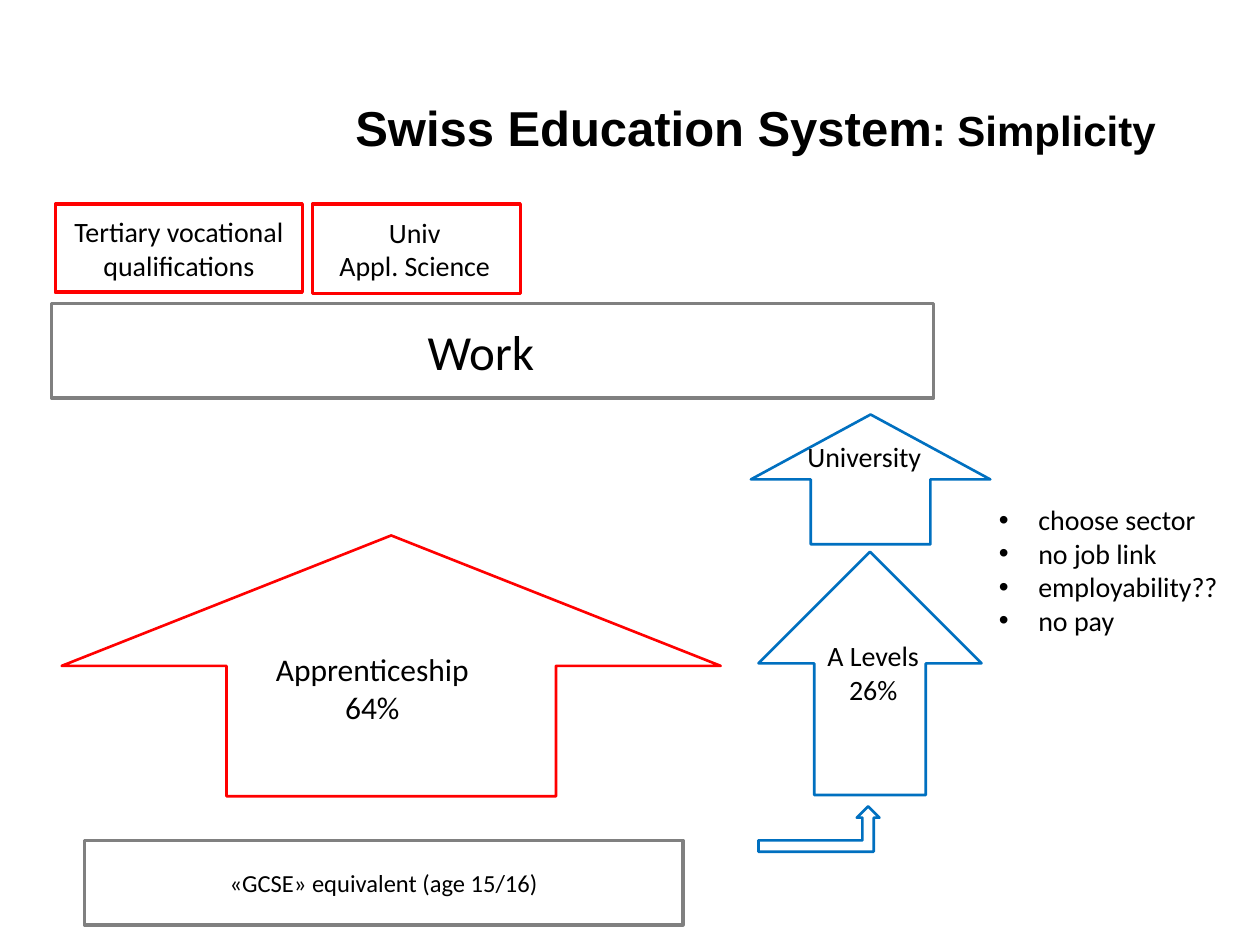
from lxml import etree
from pptx import Presentation
from pptx.dml.color import RGBColor
from pptx.enum.shapes import MSO_SHAPE
from pptx.enum.text import MSO_ANCHOR, MSO_AUTO_SIZE, PP_ALIGN
from pptx.oxml.ns import qn
from pptx.util import Pt

BLACK = RGBColor(0x00, 0x00, 0x00)
WHITE = RGBColor(0xFF, 0xFF, 0xFF)
RED = RGBColor(0xFF, 0x00, 0x00)
GREY = RGBColor(0x80, 0x80, 0x80)
BLUE = RGBColor(0x00, 0x70, 0xC0)
BOX, UP, BENT = MSO_SHAPE.RECTANGLE, MSO_SHAPE.UP_ARROW, MSO_SHAPE.BENT_UP_ARROW
LEFT, CENTER = PP_ALIGN.LEFT, PP_ALIGN.CENTER
TOP, MIDDLE = MSO_ANCHOR.TOP, MSO_ANCHOR.MIDDLE

TITLE = [("Swiss Education System", 28), (": Simplicity", 24)]
TITLE_AREA = (195.84, 49.68, 494.64, 56.16)

# (left, top, width, height), line colour, lines of text, size, right inset
STAGES = [
    ((178.56, 116.64, 118.8, 51.12), RED, ["Univ", "Appl. Science"], 16, 9),
    ((31.68, 116.64, 141.12, 50.4), RED, ["Tertiary vocational qualifications"], 16, 7.2),
    ((48.24, 480.24, 342, 48.24), GREY, ["«GCSE» equivalent (age 15/16)"], 14, 7.2),
    ((29.52, 173.52, 504, 54), GREY, ["Work"], 28, 20.5),
]

# preset, (left, top, width, height), line colour, fill, adjustments
ARROWS = [
    (UP, (35.28, 306, 376.56, 149.04), RED, WHITE, (0.5, 0.5)),
    (BENT, (433.44, 460.8, 69.12, 25.92), BLUE, None, (0.25, 0.25, 0.25)),
    (UP, (433.44, 315.36, 127.44, 138.96), BLUE, WHITE, (0.5, 0.5)),
    (UP, (429.12, 236.88, 136.8, 74.16), BLUE, None, (0.5, 0.5)),
]

# (left, top, width, height), lines of text, format
LABELS = [
    ((563.76, 283.68, 147.6, 84.96),
     ["choose sector", "no job link", "employability??", "no pay"],
     dict(size=16, bullet="•")),
    ((95.04, 367.92, 235.44, 51.12), ["Apprenticeship", "64%"],
     dict(size=18, align=CENTER)),
    ((454.32, 247.68, 96.48, 26.64), ["University"], dict(size=16)),
    ((416.88, 361.44, 164.16, 46.08), ["A Levels", "26%"],
     dict(size=16, align=CENTER)),
]


def points(area):
    return [Pt(length) for length in area]


def add_bullet(paragraph, char, indent=22.5):
    props = paragraph._p.get_or_add_pPr()
    props.set("marL", str(Pt(indent)))
    props.set("indent", str(-Pt(indent)))
    etree.SubElement(props, qn("a:buFont")).set("typeface", "Arial")
    etree.SubElement(props, qn("a:buChar")).set("char", char)


def write(frame, lines, size=16, font="Calibri", bold=False, align=LEFT,
          anchor=TOP, bullet=None, right=7.2):
    """Fill a text frame; a line is a string or a list of (text, size) runs."""
    frame.word_wrap = True
    frame.auto_size = MSO_AUTO_SIZE.NONE
    frame.vertical_anchor = anchor
    frame.margin_right = Pt(right)
    for number, line in enumerate(lines):
        paragraph = frame.add_paragraph() if number else frame.paragraphs[0]
        paragraph.alignment = align
        if bullet:
            add_bullet(paragraph, bullet)
        for text, run_size in [(line, size)] if isinstance(line, str) else line:
            run = paragraph.add_run()
            run.text = text
            run.font.name = font
            run.font.size = Pt(run_size)
            run.font.bold = bold
            run.font.color.rgb = BLACK


def add_outline(slide, preset, area, line, width, fill=None, adjustments=()):
    shape = slide.shapes.add_shape(preset, *points(area))
    shape.shadow.inherit = False
    for number, value in enumerate(adjustments):
        shape.adjustments[number] = value
    if fill is None:
        shape.fill.background()
    else:
        shape.fill.solid()
        shape.fill.fore_color.rgb = fill
    shape.line.color.rgb = line
    shape.line.width = Pt(width)
    return shape


def main():
    deck = Presentation()
    deck.slide_width, deck.slide_height = Pt(720), Pt(540)
    slide = deck.slides.add_slide(deck.slide_layouts[5])

    title = slide.shapes.title
    title.left, title.top, title.width, title.height = points(TITLE_AREA)
    write(title.text_frame, [TITLE], font="Arial", bold=True)
    title.text_frame.margin_top = Pt(6)

    for area, line, lines, size, right in STAGES:
        stage = add_outline(slide, BOX, area, line, 2)
        write(stage.text_frame, lines, size=size, align=CENTER, anchor=MIDDLE,
              right=right)
    for preset, area, line, fill, adjustments in ARROWS:
        add_outline(slide, preset, area, line, 1.5, fill, adjustments)
    for area, lines, text_format in LABELS:
        label = slide.shapes.add_textbox(*points(area))
        write(label.text_frame, lines, **text_format)

    deck.save("out.pptx")


if __name__ == "__main__":
    main()
